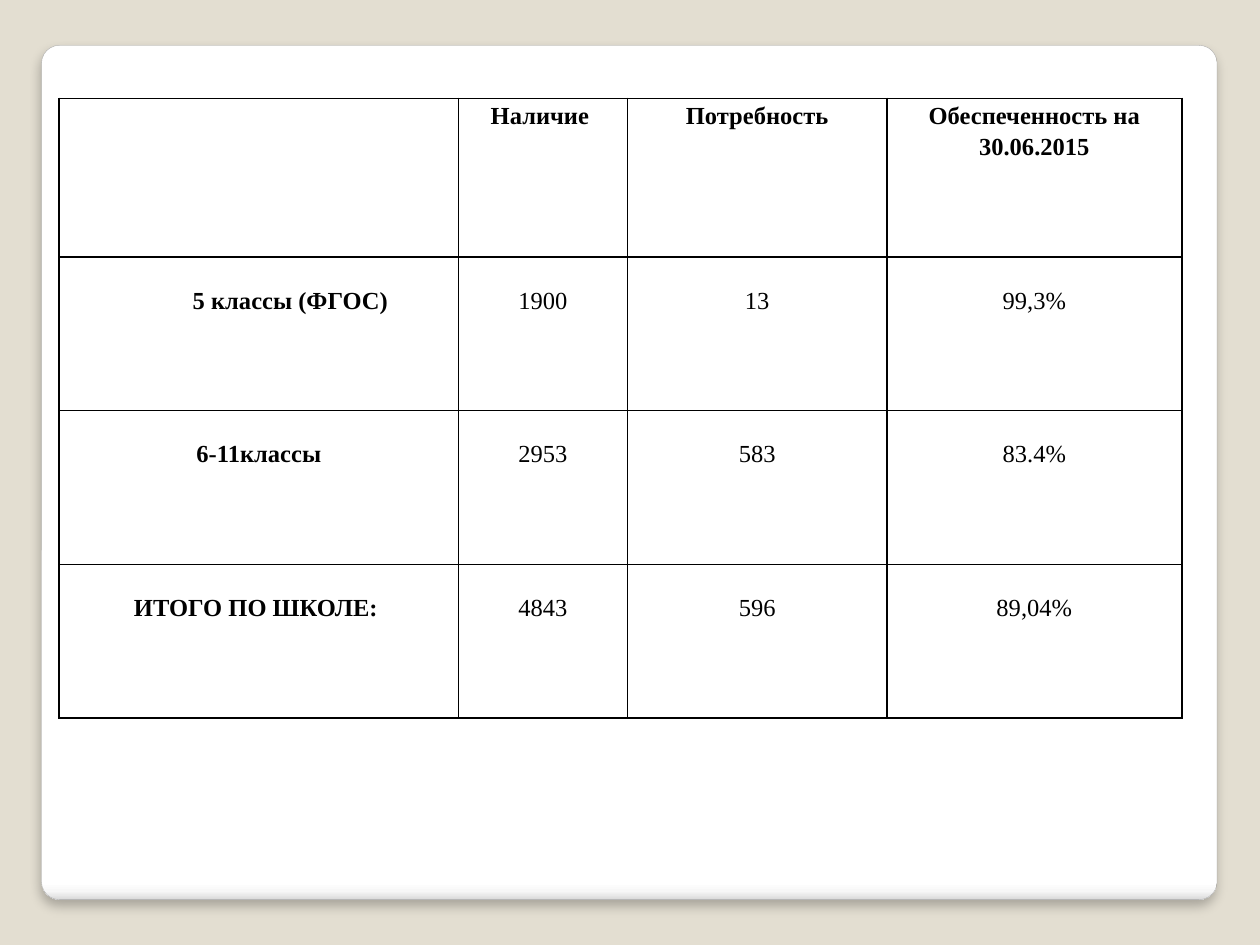
from lxml import etree
from pptx import Presentation
from pptx.dml.color import RGBColor
from pptx.enum.shapes import MSO_SHAPE
from pptx.enum.text import PP_ALIGN
from pptx.oxml.ns import qn
from pptx.util import Inches, Pt

CENTER = PP_ALIGN.CENTER
ROUNDED = MSO_SHAPE.ROUNDED_RECTANGLE
BEIGE = RGBColor(0xE3, 0xDE, 0xD1)
EDGE_GRAY = RGBColor(0xA4, 0xA4, 0xA4)
BLACK = RGBColor(0, 0, 0)
WHITE = RGBColor(0xFF, 0xFF, 0xFF)
PALE_GRAY = RGBColor(0xF7, 0xF7, 0xF7)
LIGHT_GRAY = RGBColor(0xDA, 0xDA, 0xDA)

PANEL_STOPS = [(0, WHITE), (98, WHITE), (99, PALE_GRAY), (100, LIGHT_GRAY)]
FONT = "Times New Roman"
SIDE_INSET = 0.07
BODY_TOP_INSET = 0.21
CLASS_INDENT = 0.5
COLUMN_WIDTHS = [3.17, 1.34, 2.06, 2.34]
ROW_HEIGHTS = [1.26, 1.22, 1.22, 1.22]
ROWS = [
    ["", "Наличие ", "Потребность", "Обеспеченность на 30.06.2015"],
    ["5 классы (ФГОС)", "1900", "13", "99,3%"],
    ["6-11классы", "2953", "583", "83.4%"],
    ["ИТОГО ПО ШКОЛЕ: ", "4843", "596", "89,04%"],
]


def add_color(parent, color):
    return etree.SubElement(parent, qn("a:srgbClr"), val=str(color))


def add_panel(slide):
    panel = slide.shapes.add_shape(
        ROUNDED, Inches(0.33), Inches(0.36), Inches(9.33), Inches(6.78))
    panel.adjustments[0] = 0.021
    panel.line.color.rgb = EDGE_GRAY
    panel.line.width = Pt(0.16)

    # Vertical gradient that darkens at the bottom edge
    panel.fill.gradient()
    panel.fill.gradient_angle = 270
    stops = panel.element.spPr.find(".//" + qn("a:gsLst"))
    for stop in list(stops):
        stops.remove(stop)
    for percent, color in PANEL_STOPS:
        stop = etree.SubElement(stops, qn("a:gs"), pos=str(percent * 1000))
        add_color(stop, color)

    # Soft shadow below
    panel.shadow.inherit = False
    effects = panel.element.spPr.find(qn("a:effectLst"))
    shadow = etree.SubElement(
        effects, qn("a:outerShdw"), blurRad=str(Pt(6)), dist=str(Pt(4)),
        dir="5400000", algn="ctr", rotWithShape="0")
    etree.SubElement(add_color(shadow, BLACK), qn("a:alpha"), val="25000")


def add_borders(cell):
    properties = cell._tc.get_or_add_tcPr()
    for position, side in enumerate(("a:lnL", "a:lnR", "a:lnT", "a:lnB")):
        border = etree.Element(qn(side), w=str(Pt(1)))
        add_color(etree.SubElement(border, qn("a:solidFill")), BLACK)
        properties.insert(position, border)


def fill_cell(cell, text, bold, top_inset, indent):
    cell.fill.background()
    add_borders(cell)
    cell.margin_left = Inches(SIDE_INSET + indent)
    cell.margin_right = Inches(SIDE_INSET)
    cell.margin_top = Inches(top_inset)
    cell.margin_bottom = 0
    paragraph = cell.text_frame.paragraphs[0]
    paragraph.text = text
    paragraph.alignment = CENTER
    paragraph.line_spacing = 1.15
    for run in paragraph.runs:
        run.font.name = FONT
        run.font.size = Pt(14)
        run.font.bold = bold
        run.font.color.rgb = BLACK


def add_supply_table(slide):
    table = slide.shapes.add_table(
        len(ROWS), len(COLUMN_WIDTHS), Inches(0.47), Inches(0.78),
        Inches(sum(COLUMN_WIDTHS)), Inches(sum(ROW_HEIGHTS))).table
    table.horz_banding = False
    for column, width in zip(table.columns, COLUMN_WIDTHS):
        column.width = Inches(width)
    for row, height in zip(table.rows, ROW_HEIGHTS):
        row.height = Inches(height)
    for r, values in enumerate(ROWS):
        for c, text in enumerate(values):
            fill_cell(table.cell(r, c), text,
                      bold=r == 0 or c == 0,
                      top_inset=BODY_TOP_INSET if r else 0,
                      indent=CLASS_INDENT if (r, c) == (1, 0) else 0)


def main():
    deck = Presentation()
    deck.slide_width, deck.slide_height = Inches(10), Inches(7.5)
    slide = deck.slides.add_slide(deck.slide_layouts[6])
    slide.background.fill.solid()
    slide.background.fill.fore_color.rgb = BEIGE
    add_panel(slide)
    add_supply_table(slide)
    deck.save("out.pptx")


if __name__ == "__main__":
    main()
